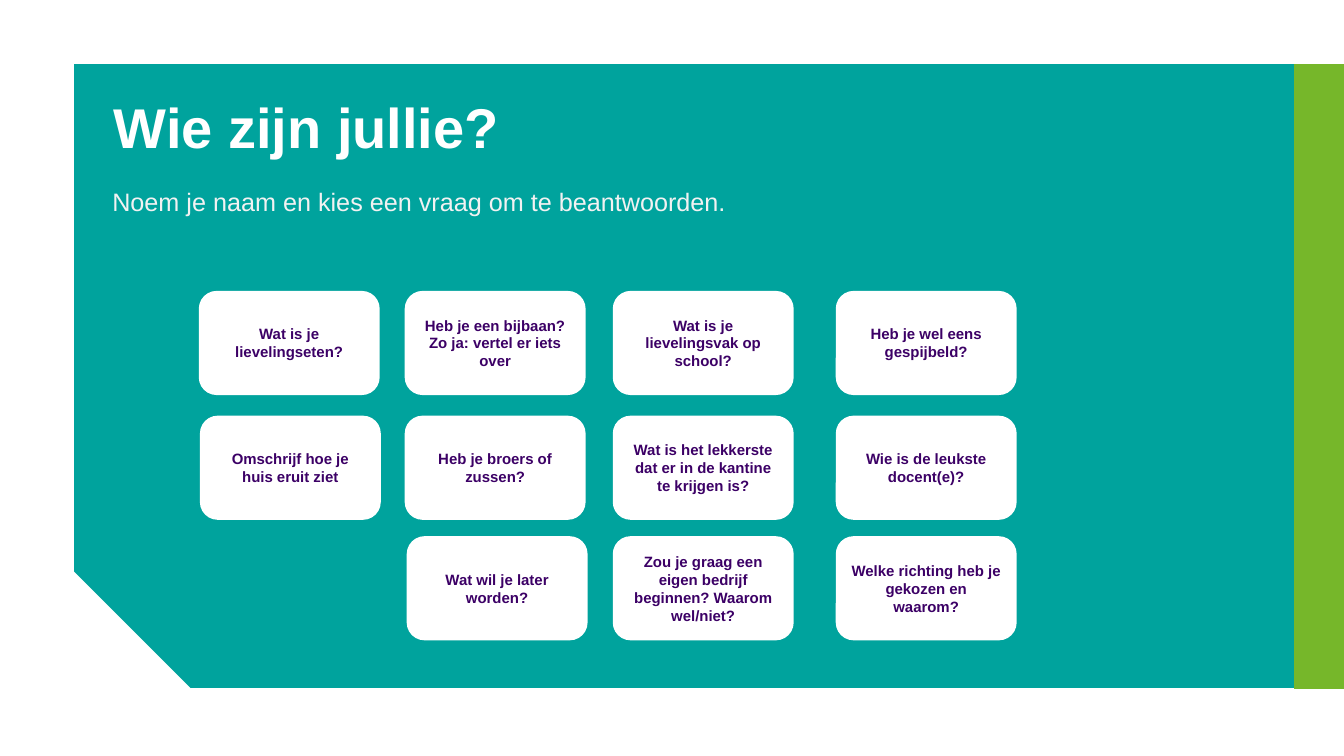
from pptx import Presentation
from pptx.dml.color import RGBColor
from pptx.enum import shapes, text
from pptx.util import Pt

HUES = {"teal": "00A39D", "green": "76B72A", "white": "FFFFFF",
        "pale": "F2F2F2", "plum": "3C0066"}
LEFT, MID = text.PP_ALIGN.LEFT, text.PP_ALIGN.CENTER
TOP, BASE, CORE = (text.MSO_ANCHOR.TOP, text.MSO_ANCHOR.BOTTOM,
                   text.MSO_ANCHOR.MIDDLE)


def paint(shape, hue):
    shape.shadow.inherit = False
    shape.fill.solid()
    shape.fill.fore_color.rgb = RGBColor.from_string(HUES[hue])
    shape.line.fill.background()


def write(shape, words, hue, size, bold, align, anchor, lead=1.0):
    frame = shape.text_frame
    frame.text = words
    look = {"word_wrap": True, "auto_size": text.MSO_AUTO_SIZE.NONE,
            "vertical_anchor": anchor}
    for key, val in look.items():
        setattr(frame, key, val)
    para = frame.paragraphs[0]
    form = {"alignment": align, "line_spacing": lead, "space_before": Pt(0)}
    for key, val in form.items():
        setattr(para, key, val)
    font = para.runs[0].font
    style = {"name": "Arial", "size": Pt(size), "bold": bold}
    for key, val in style.items():
        setattr(font, key, val)
    font.color.rgb = RGBColor.from_string(HUES[hue])


deck = Presentation()
deck.slide_width, deck.slide_height = Pt(960), Pt(540)
slide = deck.slides.add_slide(deck.slide_layouts[0])
tree = slide.shapes

parts = [
    ("teal", [(52.7, 45.7), (960, 45.7), (960, 491.3), (52.7, 491.3)]),
    ("white", [(51.1, 406.6), (136.8, 492.3), (51.1, 492.3)]),
    ("green", [(924.6, 45.7), (960, 45.7), (960, 492.2), (924.6, 492.2)]),
]
for hue, spots in parts:
    first, *rest = [(Pt(x), Pt(y)) for x, y in spots]
    path = tree.build_freeform(*first)
    path.add_line_segments(rest)
    paint(path.convert_to_shape(), hue)

title, intro = slide.placeholders
heads = [
    (title, (74.2, 63.2, 619.2, 55.4),
     ("Wie zijn jullie?", "white", 40, True, LEFT, BASE, 0.9)),
    (intro, (73, 129.6, 480.2, 51.1),
     ("Noem je naam en kies een vraag om te beantwoorden.",
      "pale", 18, False, LEFT, TOP)),
]
for holder, spot, args in heads:
    for key, val in zip(("left", "top", "width", "height"), spot):
        setattr(holder, key, Pt(val))
    write(holder, *args)
    tree._spTree.append(holder._element)

cols = [142.5, 289.6, 438.2, 597.5]
rows = [
    (208.3, 0, ["Wat is je lievelingseten?",
                "Heb je een bijbaan? Zo ja: vertel er iets over",
                "Wat is je lievelingsvak op school?",
                "Heb je wel eens gespijbeld?"]),
    (297.4, 0.8, ["Omschrijf hoe je huis eruit ziet",
                  "Heb je broers of zussen?",
                  "Wat is het lekkerste dat er in de kantine te krijgen is?",
                  "Wie is de leukste docent(e)?"]),
    (383.5, 1.4, ["Wat wil je later worden?",
                  "Zou je graag een eigen bedrijf beginnen? Waarom wel/niet?",
                  "Welke richting heb je gekozen en waarom?"]),
]
for top, shift, asks in rows:
    lefts = cols[-len(asks):]
    lefts[0] += shift
    for left, ask in zip(lefts, asks):
        card = tree.add_shape(shapes.MSO_SHAPE.ROUNDED_RECTANGLE,
                              Pt(left), Pt(top), Pt(128.2), Pt(73.4))
        paint(card, "white")
        card.line.color.rgb = RGBColor.from_string(HUES["white"])
        card.line.width = Pt(1)
        write(card, ask, "plum", 10.7, True, MID, CORE)

deck.save("out.pptx")
